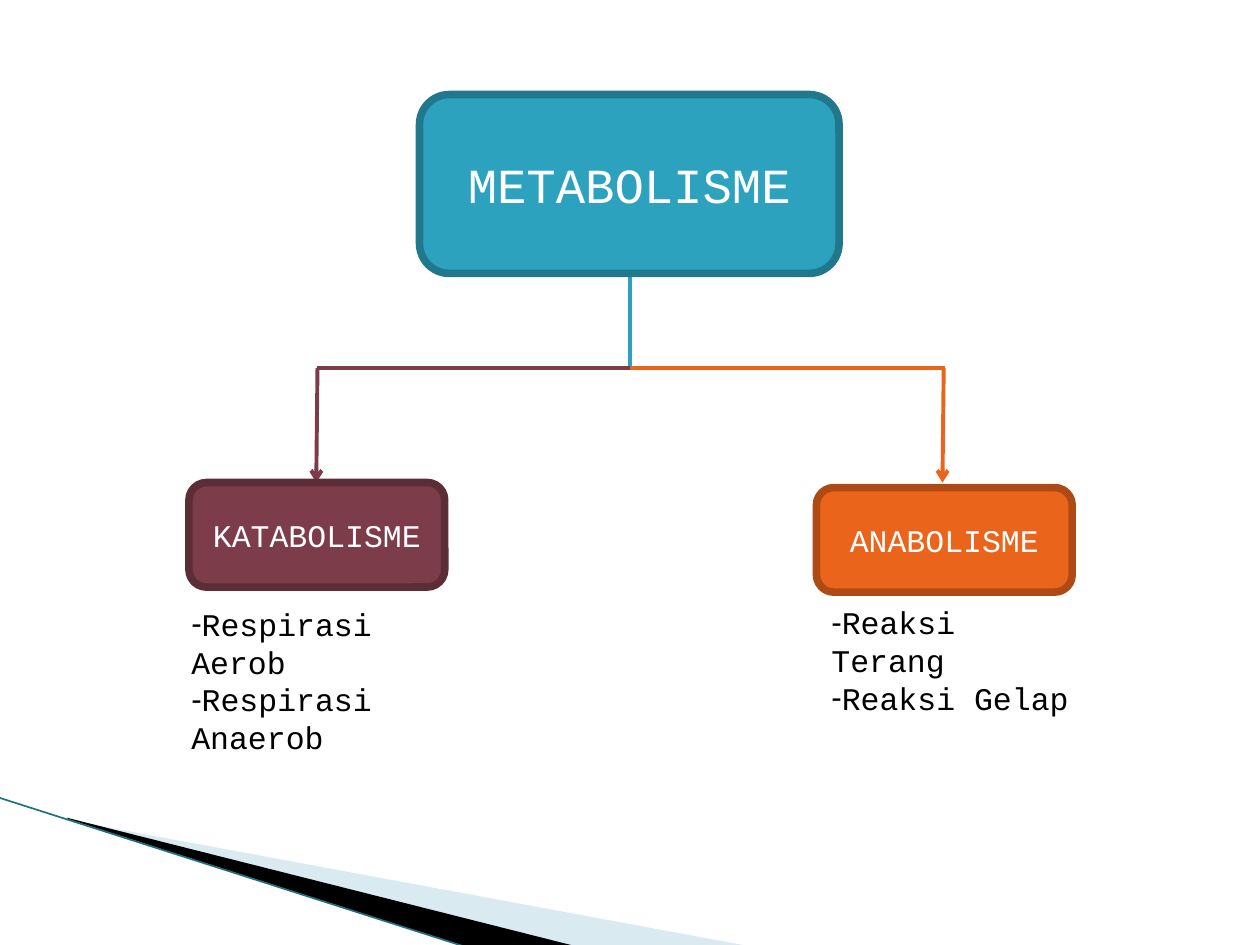
from dataclasses import dataclass

from lxml.etree import SubElement
from pptx import Presentation
from pptx.dml.color import RGBColor
from pptx.enum.shapes import MSO_CONNECTOR, MSO_SHAPE
from pptx.enum.text import MSO_ANCHOR, PP_ALIGN
from pptx.oxml.ns import qn
from pptx.util import Inches, Pt

FONT = "Courier New"
WHITE = RGBColor(0xFF, 0xFF, 0xFF)
BLACK = RGBColor(0, 0, 0)
PALE_BLUE = RGBColor(0xA0, 0xCB, 0xDC)
DARK_TEAL = RGBColor(0x1F, 0x70, 0x83)
TEAL = RGBColor(0x2D, 0xA2, 0xBF)
TEAL_EDGE = RGBColor(0x21, 0x78, 0x8D)
PLUM = RGBColor(0x7D, 0x3C, 0x4A)
PLUM_EDGE = RGBColor(0x5C, 0x2C, 0x37)
ORANGE = RGBColor(0xEB, 0x64, 0x1B)
ORANGE_EDGE = RGBColor(0xAE, 0x4A, 0x14)

Point = tuple[float, float]


@dataclass
class Box:
    text: str
    x: float
    y: float
    w: float
    h: float
    size: int
    fill: RGBColor
    edge: RGBColor


@dataclass
class Line:
    start: Point
    end: Point
    color: RGBColor
    width: float = 2.25
    arrow: bool = False


@dataclass
class Wedge:
    points: list[Point]
    color: RGBColor
    alpha: int = 100


@dataclass
class BulletList:
    x: float
    y: float
    items: list[str]


WEDGES = [
    Wedge([(0.55, 6.51), (5.95, 7.51), (4.56, 7.51), (0.55, 6.5)], PALE_BLUE, 40),
    Wedge([(0.53, 6.49), (4.57, 7.51), (3.72, 7.52), (0.54, 6.5)], BLACK),
]
WEDGE_EDGE = Line((-0.01, 6.33), (3.71, 7.52), DARK_TEAL, 0.95)

BOXES = [
    Box("METABOLISME", 3.33, 0.75, 3.33, 1.42, 28, TEAL, TEAL_EDGE),
    Box("KATABOLISME", 1.5, 3.83, 2.03, 0.83, 18, PLUM, PLUM_EDGE),
    Box("ANABOLISME", 6.48, 3.87, 2.03, 0.83, 18, ORANGE, ORANGE_EDGE),
]
LINES = [
    Line((5, 2.17), (5, 2.92), TEAL),
    Line((5.02, 2.92), (2.52, 2.92), PLUM),
    Line((2.52, 2.92), (2.51, 3.83), PLUM, arrow=True),
    Line((7.5, 2.92), (5, 2.92), ORANGE),
    Line((7.49, 2.92), (7.48, 3.83), ORANGE, arrow=True),
]
LISTS = [
    BulletList(1.42, 4.75, ["Respirasi Aerob", "Respirasi Anaerob"]),
    BulletList(6.5, 4.74, ["Reaksi Terang", "Reaksi Gelap"]),
]


def set_font(p, size: int, color: RGBColor) -> None:
    p.font.name = FONT
    p.font.size = Pt(size)
    p.font.color.rgb = color


def draw_wedge(s, wedge: Wedge) -> None:
    first, *rest = wedge.points
    builder = s.shapes.build_freeform(Inches(first[0]), Inches(first[1]))
    builder.add_line_segments([(Inches(x), Inches(y)) for x, y in rest])
    sp = builder.convert_to_shape()
    sp.shadow.inherit = False
    sp.fill.solid()
    sp.fill.fore_color.rgb = wedge.color
    sp.line.fill.background()
    if wedge.alpha < 100:
        color = sp.fill._xPr.find(qn("a:solidFill"))[0]
        SubElement(color, qn("a:alpha"), val=str(wedge.alpha * 1000))


def draw_line(s, line: Line) -> None:
    ends = [Inches(v) for v in (*line.start, *line.end)]
    cxn = s.shapes.add_connector(MSO_CONNECTOR.STRAIGHT, *ends)
    cxn.line.color.rgb = line.color
    cxn.line.width = Pt(line.width)
    if line.arrow:
        SubElement(cxn.line._get_or_add_ln(), qn("a:tailEnd"), type="arrow")
    SubElement(cxn._element.spPr, qn("a:effectLst"))


def draw_box(s, box: Box) -> None:
    sp = s.shapes.add_shape(MSO_SHAPE.ROUNDED_RECTANGLE, Inches(box.x),
                            Inches(box.y), Inches(box.w), Inches(box.h))
    sp.shadow.inherit = False
    sp.fill.solid()
    sp.fill.fore_color.rgb = box.fill
    sp.line.color.rgb = box.edge
    sp.line.width = Pt(4.33)
    tf = sp.text_frame
    tf.word_wrap = True
    tf.vertical_anchor = MSO_ANCHOR.MIDDLE
    p = tf.paragraphs[0]
    p.text = box.text
    p.alignment = PP_ALIGN.CENTER
    set_font(p, box.size, WHITE)


def draw_list(s, bullets: BulletList) -> None:
    sp = s.shapes.add_textbox(Inches(bullets.x), Inches(bullets.y),
                              Inches(2.17), Inches(1.01))
    tf = sp.text_frame
    tf.word_wrap = True
    for i, item in enumerate(bullets.items):
        p = tf.add_paragraph() if i else tf.paragraphs[0]
        p.text = item
        set_font(p, 18, BLACK)
        pPr = p._p.get_or_add_pPr()
        bullet = pPr.makeelement(qn("a:buChar"), {"char": "-"})
        font = pPr.makeelement(qn("a:buFont"), {"typeface": "Arial"})
        pPr.insert(0, bullet)
        pPr.insert(0, font)


def main() -> None:
    prs = Presentation()
    prs.slide_width, prs.slide_height = Inches(10), Inches(7.5)
    s = prs.slides.add_slide(prs.slide_layouts[6])

    # Corner decoration
    for wedge in WEDGES:
        draw_wedge(s, wedge)
    draw_line(s, WEDGE_EDGE)

    # Tree: connectors below the boxes
    for line in LINES:
        draw_line(s, line)
    for box in BOXES:
        draw_box(s, box)

    # Processes under each branch
    for bullets in LISTS:
        draw_list(s, bullets)

    prs.save("out.pptx")


if __name__ == "__main__":
    main()
